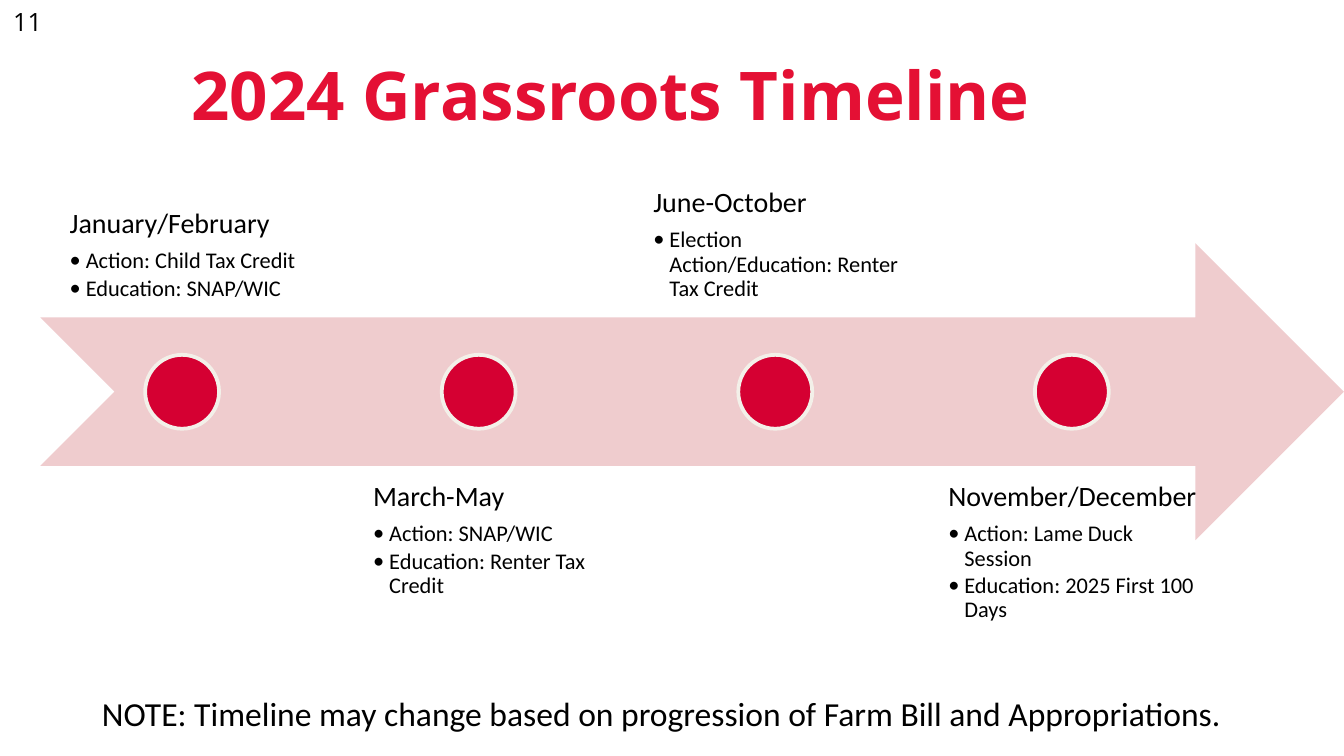
"""Build the 2024 Grassroots Timeline slide."""
from lxml import etree
from pptx import Presentation
from pptx.dml.color import RGBColor
from pptx.enum.shapes import MSO_SHAPE
from pptx.enum.text import MSO_ANCHOR, PP_ALIGN
from pptx.oxml.ns import qn
from pptx.util import Inches, Pt

ARROW, OVAL = MSO_SHAPE.NOTCHED_RIGHT_ARROW, MSO_SHAPE.OVAL
TOP, MIDDLE, BOTTOM = MSO_ANCHOR.TOP, MSO_ANCHOR.MIDDLE, MSO_ANCHOR.BOTTOM
CENTER = PP_ALIGN.CENTER


def rgb(value):
    return RGBColor.from_string(value)


def add_text(x, y, w, h, lines, size, font="Calibri", color="000000"):
    sp = s.shapes.add_textbox(Inches(x), Inches(y), Inches(w), Inches(h))
    tf = sp.text_frame
    tf.word_wrap = True
    tf.text = "\n".join(lines)
    for p in tf.paragraphs:
        for r in p.runs:
            r.font.size = Pt(size)
            r.font.name = font
            r.font.color.rgb = rgb(color)
    return tf


prs = Presentation()
prs.slide_width = Inches(10)
prs.slide_height = Inches(10 * 9 / 16)
s = prs.slides.add_slide(prs.slide_layouts[6])

add_text(0, 0, 0.5, 0.3, ["11"], 13.5, "Open Sans")

tf = add_text(0.5, 0.23, 8.09, 0.94, ["2024 Grassroots Timeline"], 36, "Open Sans", "E41034")
tf.vertical_anchor = MIDDLE
tf.paragraphs[0].alignment = CENTER
tf.paragraphs[0].runs[0].font.bold = True

arrow = s.shapes.add_shape(ARROW, Inches(0.3), Inches(1.81), Inches(9.7), Inches(2.21))
arrow.shadow.inherit = False
arrow.fill.solid()
arrow.fill.fore_color.rgb = rgb("EFCCCE")
arrow.line.fill.background()

periods = [
    ["January/February", "Action: Child Tax Credit", "Education: SNAP/WIC"],
    ["March-May", "Action: SNAP/WIC", "Education: Renter Tax Credit"],
    ["June-October", "Election Action/Education: Renter Tax Credit"],
    ["November/December", "Action: Lame Duck Session", "Education: 2025 First 100 Days"],
]
step = 6.62 / 3
for i, lines in enumerate(periods):
    above = i % 2 == 0
    tf = add_text(0.31 + i * step, 0.15 if above else 3.47, 2.1, 2.21, lines, 12)
    tf.vertical_anchor = BOTTOM if above else TOP
    tf.margin_left = tf.margin_right = tf.margin_top = tf.margin_bottom = Inches(0.12)
    tf._txBody.bodyPr.set("anchorCtr", "1")
    heading, *bullets = tf.paragraphs
    heading.runs[0].font.size = Pt(15)
    heading.line_spacing = 0.9
    heading.space_after = Pt(5.25)
    for p in bullets:
        pPr = p._p.get_or_add_pPr()
        pPr.set("marL", str(Inches(0.12)))
        pPr.set("indent", str(-Inches(0.12)))
        etree.SubElement(pPr, qn("a:buFont")).set("typeface", "Calibri")
        etree.SubElement(pPr, qn("a:buChar")).set("char", "•")
        p.level = 1
        p.line_spacing = 0.9
        p.space_after = Pt(1.8)

    dot = s.shapes.add_shape(OVAL, Inches(1.08 + i * step), Inches(2.64), Inches(0.55), Inches(0.55))
    dot.shadow.inherit = False
    dot.fill.solid()
    dot.fill.fore_color.rgb = rgb("D50032")
    dot.line.color.rgb = rgb("F3F0E9")
    dot.line.width = Pt(2)

note = "NOTE: Timeline may change based on progression of Farm Bill and Appropriations."
add_text(0.66, 5.11, 8.69, 0.4, [note], 18)

prs.save("out.pptx")
